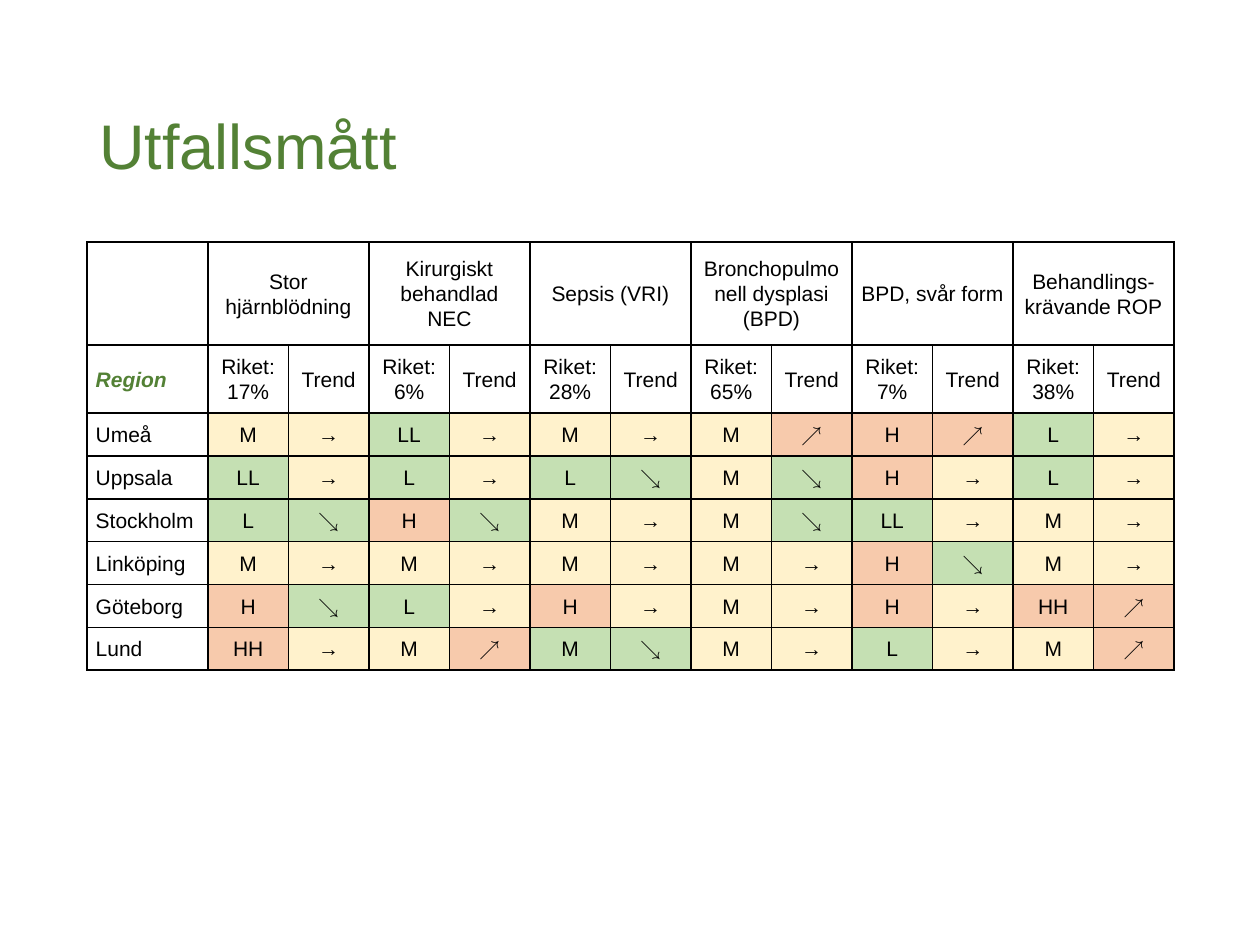
from lxml import etree
from pptx import Presentation, util as u
from pptx.dml.color import RGBColor
from pptx.enum import text
from pptx.oxml.ns import qn

BLACK, GREEN = "000000", "538135"
GOOD, SAME, BAD = "C5E0B3", "FFF2CC", "F7CAAC"
TONES = {"L": GOOD, "LL": GOOD, "↘": GOOD, "M": SAME, "→": SAME,
         "H": BAD, "HH": BAD, "↗": BAD}
HEADS = [("Stor hjärnblödning", "17%"), ("Kirurgiskt behandlad NEC", "6%"),
         ("Sepsis (VRI)", "28%"), ("Bronchopulmonell dysplasi (BPD)", "65%"),
         ("BPD, svår form", "7%"), ("Behandlings-\nkrävande ROP", "38%")]
ROWS = ["Umeå M → LL → M → M ↗ H ↗ L →",
        "Uppsala LL → L → L ↘ M ↘ H → L →",
        "Stockholm L ↘ H ↘ M → M ↘ LL → M →",
        "Linköping M → M → M → M → H ↘ M →",
        "Göteborg H ↘ L → H → M → H → HH ↗",
        "Lund HH → M ↗ M ↘ M → L → M ↗"]
ODD = {("Lund", 5): GOOD}


def rgb(code):
    """Turn a hex string into a colour."""
    return RGBColor.from_string(code)


def style(par, size, color, space):
    """Set the font and line spacing of a paragraph."""
    par.font.name, par.font.size = "Arial", u.Pt(size)
    par.font.color.rgb = rgb(color)
    par.line_spacing = space


def edge(cell):
    """Draw a thin black border on all four sides of a cell."""
    props = cell._tc.get_or_add_tcPr()
    for spot, side in enumerate(("a:lnL", "a:lnR", "a:lnT", "a:lnB")):
        line = etree.Element(qn(side), w=str(u.Pt(1)))
        fill = etree.SubElement(line, qn("a:solidFill"))
        etree.SubElement(fill, qn("a:srgbClr"), val=BLACK)
        props.insert(spot, line)


def write(cell, words, color=BLACK, left=False):
    """Fill a cell with styled text."""
    cell.text = words
    for par in cell.text_frame.paragraphs:
        style(par, 12, color, 1.07)
        par.alignment = text.PP_ALIGN.LEFT if left else text.PP_ALIGN.CENTER


def title(slide, x, y, w, h):
    """Place the slide title in the upper part of its box."""
    frame = slide.shapes.add_textbox(x, y, w, h).text_frame
    frame.word_wrap = True
    frame.vertical_anchor = text.MSO_ANCHOR.MIDDLE
    frame.margin_bottom = u.Inches(0.57)
    frame.text = "Utfallsmått"
    style(frame.paragraphs[0], 36, GREEN, 0.9)


def grid(slide, x, y, w, h):
    """Place the table of outcomes by region."""
    table = slide.shapes.add_table(8, 13, x, y, w, h).table
    table.first_row = table.horz_banding = False
    first = u.Inches(0.96)
    for num, col in enumerate(table.columns):
        col.width = (w - first) // 12 if num else first
    for row, tall in zip(table.rows, [0.82, 0.54] + [0.34] * 6):
        row.height = u.Inches(tall)
    for cell in table.iter_cells():
        cell.margin_left = cell.margin_right = u.Inches(0.07)
        cell.margin_top = cell.margin_bottom = 0
        cell.vertical_anchor = text.MSO_ANCHOR.MIDDLE
        cell.fill.background()
        edge(cell)

    for num, (name, share) in enumerate(HEADS):
        col = 1 + 2 * num
        table.cell(0, col).merge(table.cell(0, col + 1))
        write(table.cell(0, col), name)
        write(table.cell(1, col), f"Riket:\n{share}")
        write(table.cell(1, col + 1), "Trend")
    label = table.cell(1, 0)
    write(label, "Region", GREEN, left=True)
    font = label.text_frame.paragraphs[0].font
    font.bold = font.italic = True

    for num, line in enumerate(ROWS, 2):
        town, *marks = line.split()
        write(table.cell(num, 0), town, left=True)
        for col, mark in enumerate(marks, 1):
            cell = table.cell(num, col)
            write(cell, mark)
            cell.fill.solid()
            cell.fill.fore_color.rgb = rgb(ODD.get((town, col), TONES[mark]))


def main():
    """Build and save the slide."""
    deck = Presentation()
    deck.slide_width, deck.slide_height = u.Inches(10), u.Inches(7.5)
    slide = deck.slides.add_slide(deck.slide_layouts[6])
    title(slide, *map(u.Inches, (0.69, 0.72, 8.62, 1.45)))
    grid(slide, *map(u.Inches, (0.69, 1.92, 8.63, 3.4)))
    deck.save("out.pptx")


if __name__ == "__main__":
    main()
